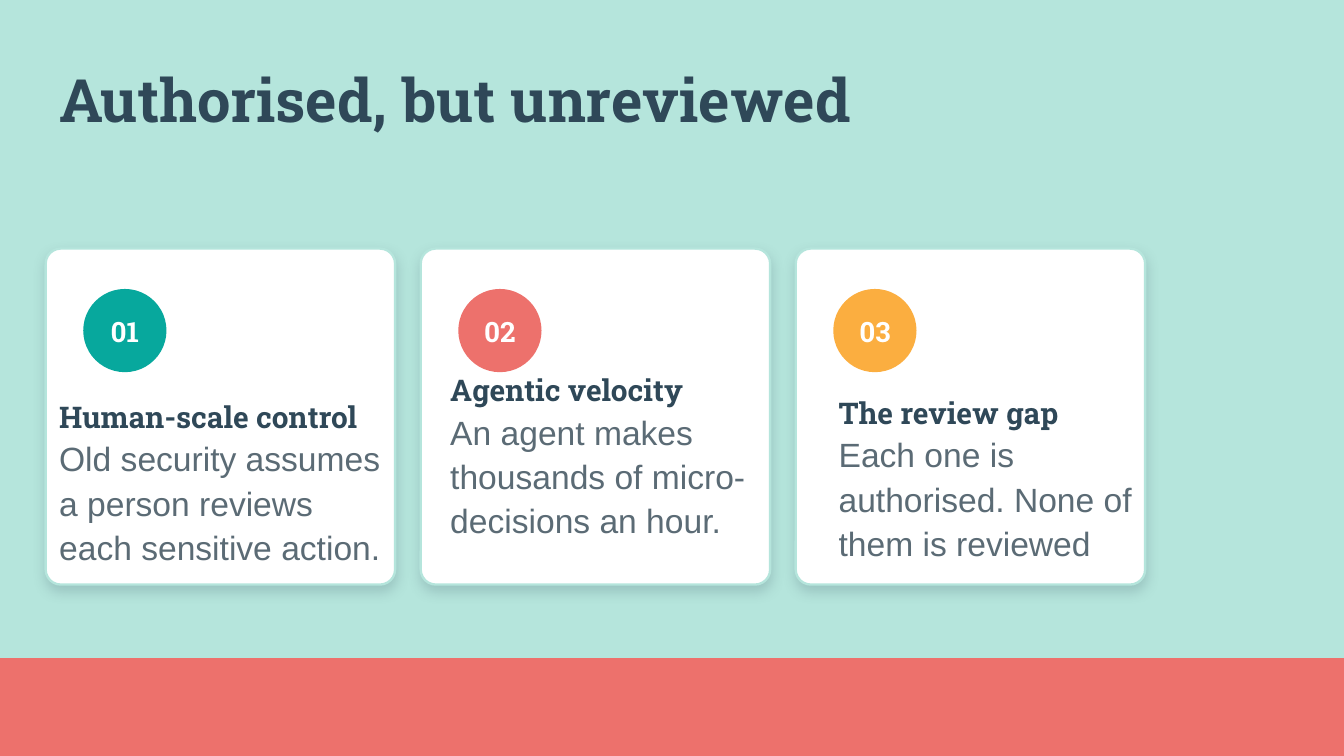
from dataclasses import dataclass

from lxml import etree
from pptx import Presentation
from pptx.dml.color import RGBColor
from pptx.enum import shapes, text
from pptx.oxml import ns
from pptx.util import Pt

SLAB = "Roboto Slab"
NAVY, GREY, WHITE = "2F4858", "5B6B75", "FFFFFF"
MINT, CORAL, TEAL, AMBER = "B5E5DC", "ED716C", "07A89D", "FBAE40"

TITLE_FORMAT = {"name": SLAB, "size": Pt(32), "bold": True}
NUMBER_FORMAT = {"name": SLAB, "size": Pt(15), "bold": True}
HEADING_FORMAT = {"name": SLAB, "size": Pt(16), "bold": True}
BODY_FORMAT = {"name": "Arial", "size": Pt(18), "bold": False}

CARD_LEFT, CARD_TOP, CARD_WIDTH, CARD_HEIGHT = 24.5, 133.2, 187.2, 180
CARD_PITCH = 200.9
CIRCLE_SIZE = 44.6


@dataclass
class Box:
    left: float
    top: float
    width: float
    height: float

    def lengths(self) -> tuple:
        return Pt(self.left), Pt(self.top), Pt(self.width), Pt(self.height)


@dataclass
class Card:
    number: str
    color: str
    heading: str
    body: str
    text_box: Box


CARDS = [
    Card("01", TEAL, "Human-scale control",
         "Old security assumes a person reviews each sensitive action.",
         Box(28.1, 208.1, 186.5, 98.6)),
    Card("02", CORAL, "Agentic velocity",
         "An agent makes thousands of micro-decisions an hour.",
         Box(237.6, 193.7, 186.5, 122.4)),
    Card("03", AMBER, "The review gap",
         "Each one is authorised. None of them is reviewed",
         Box(445.7, 205.9, 167.8, 98.6)),
]


def rgb(color: str) -> RGBColor:
    return RGBColor.from_string(color)


def format_frame(frame, inset: float, anchor=text.MSO_ANCHOR.TOP) -> None:
    values = {"word_wrap": True, "vertical_anchor": anchor,
              "auto_size": text.MSO_AUTO_SIZE.SHAPE_TO_FIT_TEXT}
    for side in ("left", "top", "right", "bottom"):
        values[f"margin_{side}"] = Pt(inset)
    for name, value in values.items():
        setattr(frame, name, value)


def write(paragraph, words: str, font_format: dict, color: str,
          alignment=text.PP_ALIGN.LEFT, spacing: float = 1.1) -> None:
    paragraph.alignment = alignment
    paragraph.line_spacing = spacing
    run = paragraph.add_run()
    run.text = words
    for name, value in font_format.items():
        setattr(run.font, name, value)
    run.font.color.rgb = rgb(color)


def add_filled(parent, kind, box: Box, fill: str):
    shape = parent.add_shape(kind, *box.lengths())
    shape.shadow.inherit = False
    shape.fill.solid()
    shape.fill.fore_color.rgb = rgb(fill)
    shape.line.fill.background()
    return shape


def add_soft_shadow(shape) -> None:
    effects = shape.element.spPr.find(ns.qn("a:effectLst"))
    shadow = etree.SubElement(
        effects, ns.qn("a:outerShdw"), blurRad=str(Pt(7)), dist=str(Pt(3)),
        dir="5400000", algn="bl", rotWithShape="0")
    color = etree.SubElement(shadow, ns.qn("a:srgbClr"), val=NAVY)
    etree.SubElement(color, ns.qn("a:alpha"), val="20000")


def add_badge(slide, card: Card, left: float) -> None:
    group = slide.shapes.add_group_shape()
    add_filled(group.shapes, shapes.MSO_SHAPE.OVAL,
               Box(left, 154.8, CIRCLE_SIZE, CIRCLE_SIZE), card.color)
    label = group.shapes.add_textbox(*Box(left + 6.5, 167.8, 31.7, 18).lengths())
    format_frame(label.text_frame, 0, text.MSO_ANCHOR.MIDDLE)
    write(label.text_frame.paragraphs[0], card.number, NUMBER_FORMAT, WHITE,
          text.PP_ALIGN.CENTER)


def add_card(slide, card: Card, left: float) -> None:
    panel = add_filled(slide.shapes, shapes.MSO_SHAPE.ROUNDED_RECTANGLE,
                       Box(left, CARD_TOP, CARD_WIDTH, CARD_HEIGHT), WHITE)
    panel.adjustments[0] = 0.045
    panel.line.color.rgb = rgb(MINT)
    panel.line.width = Pt(1.25)
    add_soft_shadow(panel)
    add_badge(slide, card, left + 20.1)
    frame = slide.shapes.add_textbox(*card.text_box.lengths()).text_frame
    format_frame(frame, 3.6)
    write(frame.paragraphs[0], card.heading, HEADING_FORMAT, NAVY)
    write(frame.add_paragraph(), card.body, BODY_FORMAT, GREY)


def add_title(slide, words: str) -> None:
    title = slide.shapes.title
    title.left, title.top, title.width, title.height = Box(28.1, 30.2, 663.8, 46.1).lengths()
    format_frame(title.text_frame, 3.6)
    write(title.text_frame.paragraphs[0], words, TITLE_FORMAT, NAVY, spacing=1.0)


def main() -> None:
    presentation = Presentation()
    presentation.slide_width, presentation.slide_height = Pt(720), Pt(405)
    slide = presentation.slides.add_slide(presentation.slide_layouts[5])
    slide.background.fill.solid()
    slide.background.fill.fore_color.rgb = rgb(MINT)
    add_filled(slide.shapes, shapes.MSO_SHAPE.RECTANGLE, Box(0, 352.6, 720, 52.4), CORAL)
    add_title(slide, "Authorised, but unreviewed")
    for index, card in enumerate(CARDS):
        add_card(slide, card, CARD_LEFT + index * CARD_PITCH)
    presentation.save("out.pptx")


if __name__ == "__main__":
    main()
